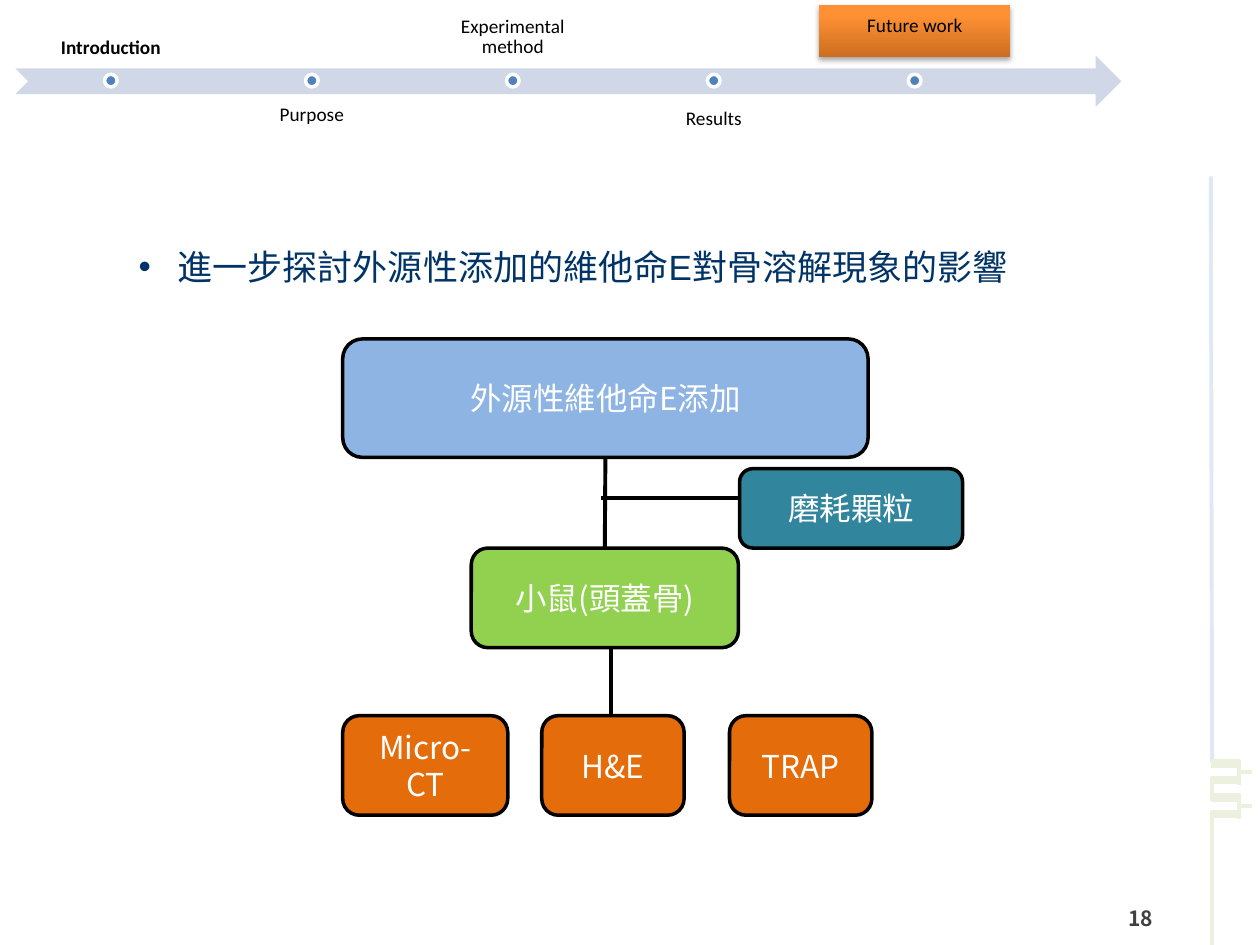
from dataclasses import dataclass

from lxml import etree
from pptx import Presentation
from pptx.dml.color import RGBColor
from pptx.enum.shapes import MSO_CONNECTOR as LINK, MSO_SHAPE as SHAPE
from pptx.enum.text import MSO_ANCHOR as ANCHOR, MSO_AUTO_SIZE as FIT, PP_ALIGN as ALIGN
from pptx.oxml import parse_xml
from pptx.oxml.ns import nsdecls, qn
from pptx.util import Inches, Pt


@dataclass(frozen=True)
class Theme:
    black: str = "000000"
    white: str = "FFFFFF"
    navy: str = "003366"
    gray: str = "404040"
    arrow: str = "D0D8E8"
    dot: str = "4F81BD"
    orange_dark: str = "CC6E20"
    orange_light: str = "FF9034"
    vitamin: str = "8EB4E3"
    mouse: str = "92D050"
    assay: str = "E46C0A"
    particle: str = "31859C"
    circuit: str = "EBF1DE"
    circuit_pale: str = "E1E8F5"
    label_size: int = 11
    number_size: int = 12
    node_size: int = 18
    body_size: int = 20
    label_font: str = "Calibri"
    body_font: str = "Arial"
    node_font: str = "Noto Sans CJK SC"


theme = Theme()
rgb = RGBColor.from_string


def style(para, font, size, color, align, bold=False):
    para.alignment = align
    para.font.name = font
    para.font.size = Pt(size)
    para.font.bold = bold
    para.font.color.rgb = rgb(color)
    # East Asian characters take their own typeface entry
    east = etree.SubElement(para._p.pPr.find(qn("a:defRPr")), qn("a:ea"))
    east.set("typeface", theme.node_font)


def draw_line(x1, y1, x2, y2, color=theme.black, width=2.25):
    line = page.shapes.add_connector(LINK.STRAIGHT, Inches(x1), Inches(y1), Inches(x2), Inches(y2))
    line.line.color.rgb = rgb(color)
    line.line.width = Pt(width)
    etree.SubElement(line._element.spPr, qn("a:effectLst"))
    return line


deck = Presentation()
deck.slide_width, deck.slide_height = Inches(10), Inches(7.5)
page = deck.slides.add_slide(deck.slide_layouts[1])
title = page.shapes.title
title._element.getparent().remove(title._element)

# Circuit ornament along the right edge
draw_line(9.61, 1.4, 9.62, 6.05, theme.circuit_pale)
draw_line(9.62, 6.17, 9.62, 6.36, theme.circuit)
draw_line(9.62, 6.44, 9.62, 7.5, theme.circuit)
for top in (6.06, 6.33):
    for y in (top, top + 0.13):
        draw_line(9.61, y, 9.84, y, theme.circuit, 5)
    draw_line(9.83, top - 0.03, 9.83, top + 0.17, theme.circuit)
    draw_line(9.83, top + 0.07, 9.94, top + 0.07, theme.circuit)

# Page number
number = page.shapes.add_textbox(Inches(6.89), Inches(7.09), Inches(2.36), Inches(0.39))
number.text_frame.word_wrap = True
number.text_frame.vertical_anchor = ANCHOR.MIDDLE
number.text_frame.text = "18"
style(number.text_frame.paragraphs[0], theme.node_font, theme.number_size, theme.gray, ALIGN.RIGHT, True)

# Progress arrow
arrow = page.shapes.add_shape(SHAPE.NOTCHED_RIGHT_ARROW, Inches(0.12), Inches(0.44), Inches(8.78), Inches(0.41))
arrow.shadow.inherit = False
arrow.fill.solid()
arrow.fill.fore_color.rgb = rgb(theme.arrow)
arrow.line.fill.background()

# Highlight behind the current stage
stage_left, stage_step = 0.12, 1.595
current = page.shapes.add_shape(
    SHAPE.RECTANGLE, Inches(stage_left + 4 * stage_step), Inches(0.04), Inches(1.52), Inches(0.41))
current.fill.gradient()
current.fill.gradient_angle = 90
for stop, color, position in zip(
        current.fill.gradient_stops, (theme.orange_dark, theme.orange_light), (0, 0.8)):
    stop.color.rgb = rgb(color)
    stop.position = position
current.line.fill.background()
current.shadow.inherit = False
current._element.spPr.find(qn("a:effectLst")).append(parse_xml(
    f'<a:outerShdw {nsdecls("a")} blurRad="{Pt(3.1)}" dist="{Pt(1.8)}" dir="5400000" rotWithShape="0">'
    f'<a:srgbClr val="{theme.black}"><a:alpha val="35000"/></a:srgbClr></a:outerShdw>'))

# Stage labels and dots
stages = [
    ("Introduction", 0.14, ANCHOR.BOTTOM),
    ("Purpose", 0.75, ANCHOR.TOP),
    ("Experimental method", 0.14, ANCHOR.BOTTOM),
    ("Results", 0.7, ANCHOR.BOTTOM),
    ("Future work", 0.04, ANCHOR.TOP),
]
for index, (text, top, anchor) in enumerate(stages):
    left = stage_left + index * stage_step
    label = page.shapes.add_textbox(Inches(left), Inches(top), Inches(1.52), Inches(0.41))
    frame = label.text_frame
    frame.word_wrap = True
    frame.vertical_anchor = anchor
    frame.margin_left = frame.margin_right = frame.margin_top = frame.margin_bottom = Inches(0.09)
    frame.text = text
    frame.paragraphs[0].line_spacing = 0.9
    style(frame.paragraphs[0], theme.label_font, theme.label_size, theme.black, ALIGN.CENTER, index == 0)

    dot = page.shapes.add_shape(SHAPE.OVAL, Inches(left + 0.71), Inches(0.59), Inches(0.1), Inches(0.1))
    dot.shadow.inherit = False
    dot.fill.solid()
    dot.fill.fore_color.rgb = rgb(theme.dot)
    dot.line.color.rgb = rgb(theme.white)
    dot.line.width = Pt(2)

# Bullet
body = page.placeholders[1]
body.left, body.top, body.width, body.height = Inches(1), Inches(1.9), Inches(7.69), Inches(1.11)
body.text_frame.auto_size = FIT.NONE
body.text_frame.text = "進一步探討外源性添加的維他命E對骨溶解現象的影響"
para = body.text_frame.paragraphs[0]
para.space_before = Pt(0)
props = para._p.get_or_add_pPr()
props.set("marL", str(Inches(0.31)))
props.set("indent", str(-Inches(0.31)))
etree.SubElement(props, qn("a:buFont")).set("typeface", theme.body_font)
etree.SubElement(props, qn("a:buChar")).set("char", "•")
style(para, theme.body_font, theme.body_size, theme.navy, ALIGN.LEFT)

# Flow chart: the side branch lies under the boxes
draw_line(4.77, 3.95, 5.91, 3.95)
nodes = [
    ("外源性維他命E添加", 2.72, 2.69, 4.17, 0.94, theme.vitamin),
    ("小鼠(頭蓋骨)", 3.74, 4.35, 2.12, 0.79, theme.mouse),
    ("Micro-CT", 2.72, 5.68, 1.31, 0.79, theme.assay),
    ("H&E", 4.3, 5.68, 1.13, 0.79, theme.assay),
    ("TRAP", 5.79, 5.68, 1.13, 0.79, theme.assay),
    ("磨耗顆粒", 5.87, 3.72, 1.77, 0.63, theme.particle),
]
boxes = {}
for text, left, top, width, height, color in nodes:
    box = page.shapes.add_shape(
        SHAPE.ROUNDED_RECTANGLE, Inches(left), Inches(top), Inches(width), Inches(height))
    box.shadow.inherit = False
    box.fill.solid()
    box.fill.fore_color.rgb = rgb(color)
    box.line.color.rgb = rgb(theme.black)
    box.line.width = Pt(2)
    box.text_frame.vertical_anchor = ANCHOR.MIDDLE
    box.text_frame.text = text
    style(box.text_frame.paragraphs[0], theme.node_font, theme.node_size, theme.white, ALIGN.CENTER)
    boxes[text] = box

# Flow chart: links from box to box
trunk = draw_line(4.8, 3.63, 4.8, 4.35)
trunk.begin_connect(boxes["外源性維他命E添加"], 2)
trunk.end_connect(boxes["小鼠(頭蓋骨)"], 0)
draw_line(4.85, 5.13, 4.85, 5.68)

deck.save("out.pptx")
